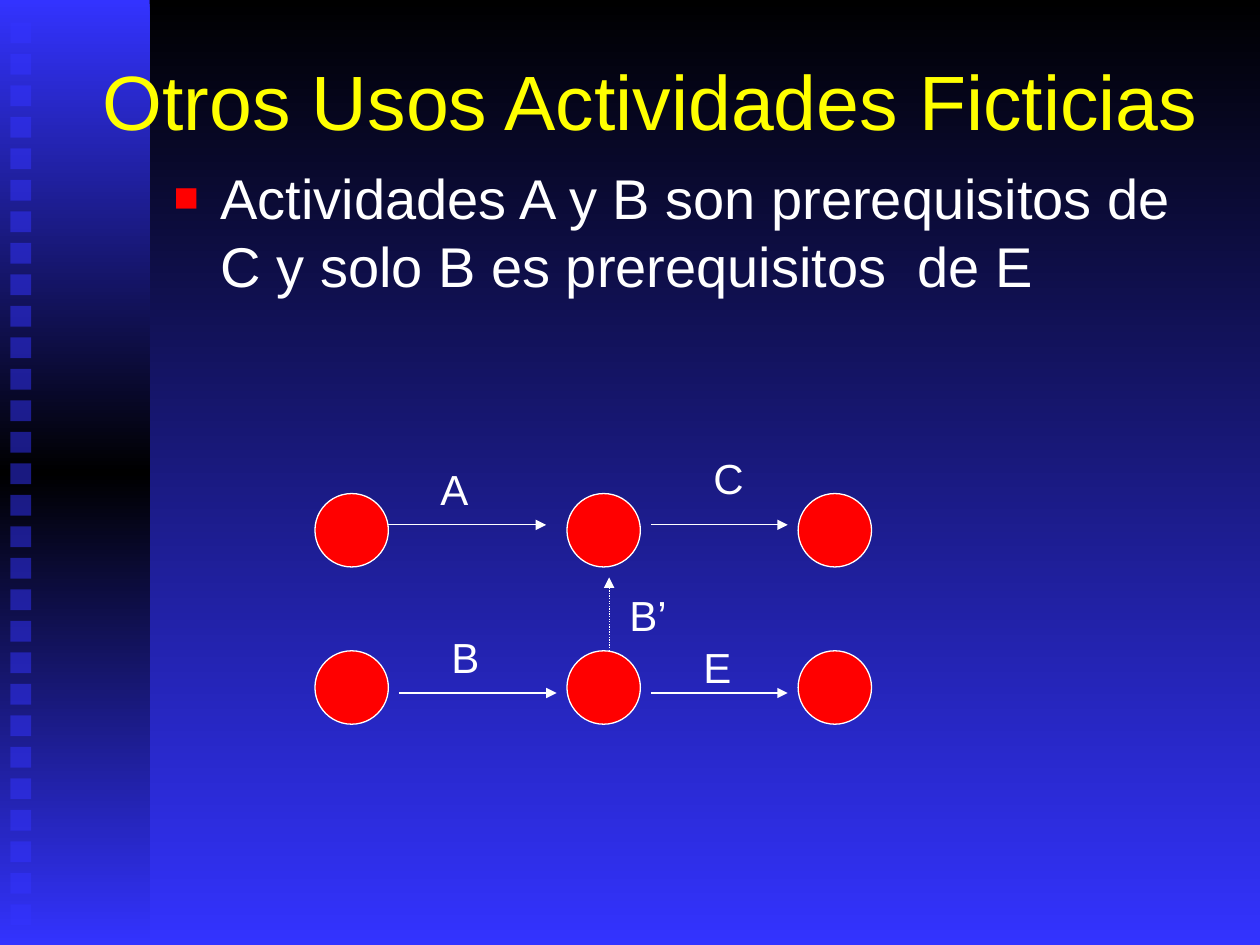
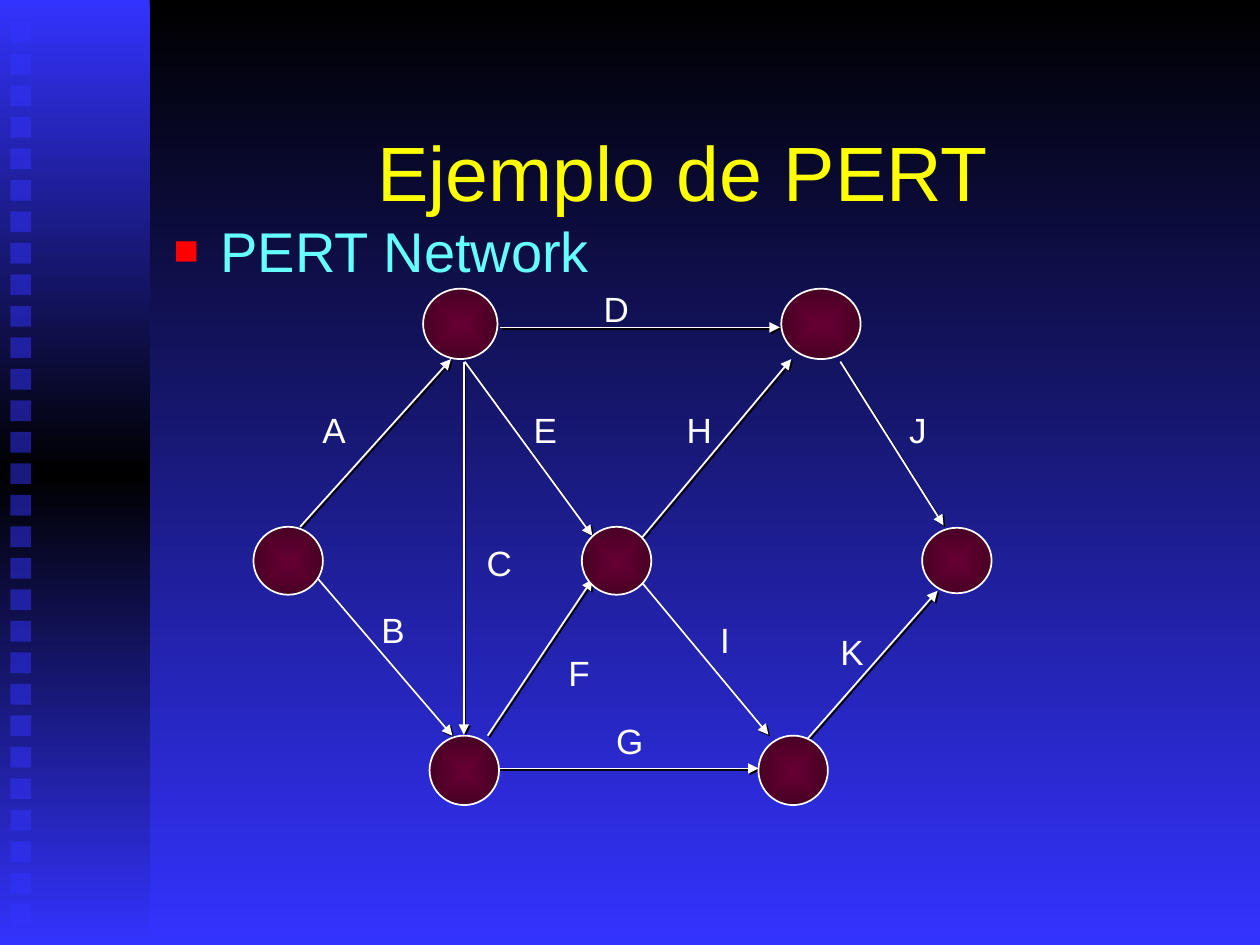
from dataclasses import dataclass

from lxml import etree
from pptx import Presentation
from pptx import util as u
from pptx.dml.color import RGBColor
from pptx.enum import dml, shapes, text
from pptx.oxml.ns import qn


@dataclass(frozen=True)
class Theme:
    font: str = "Arial"
    black: str = "000000"
    blue: str = "3333FF"
    white: str = "FFFFFF"
    yellow: str = "FFFF00"
    cyan: str = "66FFFF"
    red: str = "FF0000"
    wine: str = "660033"
    dark: str = "490024"
    title: int = 44
    body: int = 32
    large: int = 24
    small: int = 20


T = Theme()
SIDE = 1.48
COLS = (6.35, 11.43, 16.09)
ROWS = (9.95, 13.12)

# label: arrow ends (x1, y1, x2, y2), label box (left, top, width)
USES = {
    "A": ((7.83, 10.58, 11.01, 10.58), (8.62, 9.22, 1.07)),
    "B": ((8.04, 13.97, 11.22, 13.97), (8.84, 12.6, 1.07)),
    "B’": ((12.28, 13.12, 12.28, 11.64), (12.43, 11.76, 1.45)),
    "C": ((13.12, 10.58, 15.88, 10.58), (14.12, 8.99, 1.14)),
    "E": ((13.12, 13.97, 15.88, 13.97), (13.92, 12.8, 1.07)),
}
PERT = {
    "A": ((6.05, 10.62, 9.09, 7.24), (6.2, 8.08, 1.07)),
    "B": ((6.25, 11.48, 9.12, 14.83), (7.39, 12.12, 1.07)),
    "C": ((9.35, 7.29, 9.35, 14.81), (9.51, 10.77, 1.12)),
    "D": ((10.08, 6.6, 15.72, 6.6), (11.87, 5.64, 1.12)),
    "E": ((9.37, 7.29, 11.94, 10.8), (10.46, 8.08, 1.07)),
    "F": ((9.83, 14.83, 11.94, 11.68), (11.16, 12.98, 1.04)),
    "G": ((10.03, 15.49, 15.29, 15.49), (12.12, 14.35, 1.16)),
    "H": ((12.93, 10.85, 15.95, 7.24), (13.54, 8.08, 1.12)),
    "I": ((12.93, 11.73, 15.49, 14.81), (14.22, 12.32, 0.82)),
    "J": ((16.94, 7.29, 19.02, 10.59), (18.03, 8.08, 0.97)),
    "K": ((16.13, 15.06, 18.9, 11.91), (16.64, 12.57, 1.07)),
}
EVENTS = (
    (5.11, 10.62, 1.4, 1.37),
    (8.53, 5.82, 1.5, 1.42),
    (8.66, 14.83, 1.4, 1.4),
    (11.73, 10.62, 1.4, 1.37),
    (15.75, 5.82, 1.6, 1.42),
    (15.29, 14.83, 1.4, 1.4),
    (18.59, 10.64, 1.4, 1.32),
)


def rgb(code):
    return RGBColor.from_string(code)


def cm(*sizes):
    return [u.Cm(size) for size in sizes]


def add(node, tag, **attrs):
    return etree.SubElement(node, qn(tag), {k: str(v) for k, v in attrs.items()})


def shade(fill, root, codes, radial=False):
    """Spread the colours evenly, downwards or from the centre outwards."""
    fill.gradient()
    grad = root.find(".//" + qn("a:gradFill"))
    for child in list(grad):
        grad.remove(child)
    stops = add(grad, "a:gsLst")
    for n, code in enumerate(codes):
        stop = add(stops, "a:gs", pos=100000 * n // (len(codes) - 1))
        add(stop, "a:srgbClr", val=code)
    if radial:
        way = add(grad, "a:path", path="shape")
        add(way, "a:fillToRect", l=50000, t=50000, r=50000, b=50000)
    else:
        add(grad, "a:lin", ang=5400000, scaled=0)


def style(para, size, code):
    for run in para.runs:
        run.font.name = T.font
        run.font.size = u.Pt(size)
        run.font.color.rgb = rgb(code)


def add_block(host, box):
    block = host.add_shape(shapes.MSO_SHAPE.RECTANGLE, *cm(*box))
    block.shadow.inherit = False
    block.line.fill.background()
    return block


def set_base(slide):
    """Give the slide's layout the background and the band of squares."""
    base = slide.slide_layout
    shade(base.background.fill, base.element, (T.black, T.blue))
    group = slide.shapes.add_group_shape()
    band = add_block(group.shapes, (0, 0, 3.02, 19.05))
    shade(band.fill, band.element, (T.blue, T.black, T.blue))
    for n in range(29):
        block = add_block(group.shapes, (0.21, 0.45 + n * 17.78 / 28, 0.42, 0.42))
        block.fill.solid()
        block.fill.fore_color.rgb = rgb(T.blue)
        add(block.element.spPr.find(".//" + qn("a:srgbClr")), "a:alpha", val=50000)
    for n, node in enumerate(group.element.iter(qn("p:cNvPr")), 10):
        node.set("id", str(n))
    base.shapes.element.append(group.element)


def set_title(slide, words, box):
    title = slide.shapes.title
    title.left, title.top, title.width, title.height = cm(*box)
    frame = title.text_frame
    frame.text = words
    frame.auto_size = text.MSO_AUTO_SIZE.NONE
    frame.vertical_anchor = text.MSO_ANCHOR.MIDDLE
    para = frame.paragraphs[0]
    para.alignment = text.PP_ALIGN.CENTER
    style(para, T.title, T.yellow)


def add_point(slide, words, box, code):
    frame = slide.shapes.add_textbox(*cm(*box)).text_frame
    frame.word_wrap = True
    frame.text = words
    para = frame.paragraphs[0]
    style(para, T.body, code)
    props = para._p.get_or_add_pPr()
    props.set("marL", str(u.Cm(0.95)))
    props.set("indent", str(u.Cm(-0.95)))
    add(add(props, "a:spcBef"), "a:spcPct", val=20000)
    add(add(props, "a:buClr"), "a:srgbClr", val=T.red)
    add(props, "a:buSzPct", val=75000)
    add(props, "a:buFont", typeface=T.font)
    add(props, "a:buChar", char="■")


def add_circle(slide, box, width):
    circle = slide.shapes.add_shape(shapes.MSO_SHAPE.OVAL, *cm(*box))
    circle.shadow.inherit = False
    circle.line.color.rgb = rgb(T.white)
    circle.line.width = u.Pt(width)
    return circle


def add_arrow(slide, ends, width, dash=None, shadow=False):
    arrow = slide.shapes.add_connector(shapes.MSO_CONNECTOR.STRAIGHT, *cm(*ends))
    arrow.line.color.rgb = rgb(T.white)
    arrow.line.width = u.Pt(width)
    if dash:
        arrow.line.dash_style = dash
    props = arrow.element.spPr
    add(props.find(qn("a:ln")), "a:tailEnd", type="triangle")
    effect = add(props, "a:effectLst")
    if shadow:
        cast = add(effect, "a:outerShdw", dist=u.Pt(1.4), dir=2700000)
        add(cast, "a:srgbClr", val=T.black)


def add_label(slide, words, box, size, pad):
    """Write a label whose side padding is twice the one above and below."""
    frame = slide.shapes.add_textbox(*cm(*box)).text_frame
    frame.word_wrap = False
    frame.auto_size = text.MSO_AUTO_SIZE.SHAPE_TO_FIT_TEXT
    frame.margin_left = frame.margin_right = u.Cm(2 * pad)
    frame.margin_top = frame.margin_bottom = u.Cm(pad)
    frame.text = words
    style(frame.paragraphs[0], size, T.white)


def draw_uses(slide):
    set_title(slide, "Otros Usos Actividades Ficticias", (1.48, 0.42, 23.28, 3.18))
    add_point(
        slide,
        "Actividades A y B son prerequisitos de C y solo B es prerequisitos  de E",
        (3.25, 3.18, 21.59, 3.05),
        T.white,
    )
    for left in COLS:
        for top in ROWS:
            circle = add_circle(slide, (left, top, SIDE, SIDE), 0.75)
            circle.fill.solid()
            circle.fill.fore_color.rgb = rgb(T.red)
    for name, (ends, spot) in USES.items():
        dash = dml.MSO_LINE.ROUND_DOT if name == "B’" else None
        add_arrow(slide, ends, 0.75, dash)
        add_label(slide, name, (*spot, 1.27), T.large, 0.13)


def draw_pert(slide):
    set_title(slide, "Ejemplo de PERT", (3.94, 2.46, 19.66, 1.96))
    add_point(slide, "PERT Network", (3.25, 4.24, 21.26, 11.38), T.cyan)
    for name, (ends, spot) in PERT.items():
        add_arrow(slide, ends, 1, shadow=True)
        add_label(slide, name, (*spot, 1.14), T.small, 0.15)
    for box in EVENTS:
        circle = add_circle(slide, box, 1)
        shade(circle.fill, circle.element, (T.wine, T.dark), radial=True)


def main():
    deck = Presentation()
    deck.slide_width, deck.slide_height = cm(25.4, 19.05)
    layout = deck.slide_layouts.get_by_name("Title Only")
    uses, pert = (deck.slides.add_slide(layout) for _ in range(2))
    set_base(uses)
    draw_uses(uses)
    draw_pert(pert)
    deck.save("out.pptx")


if __name__ == "__main__":
    main()
